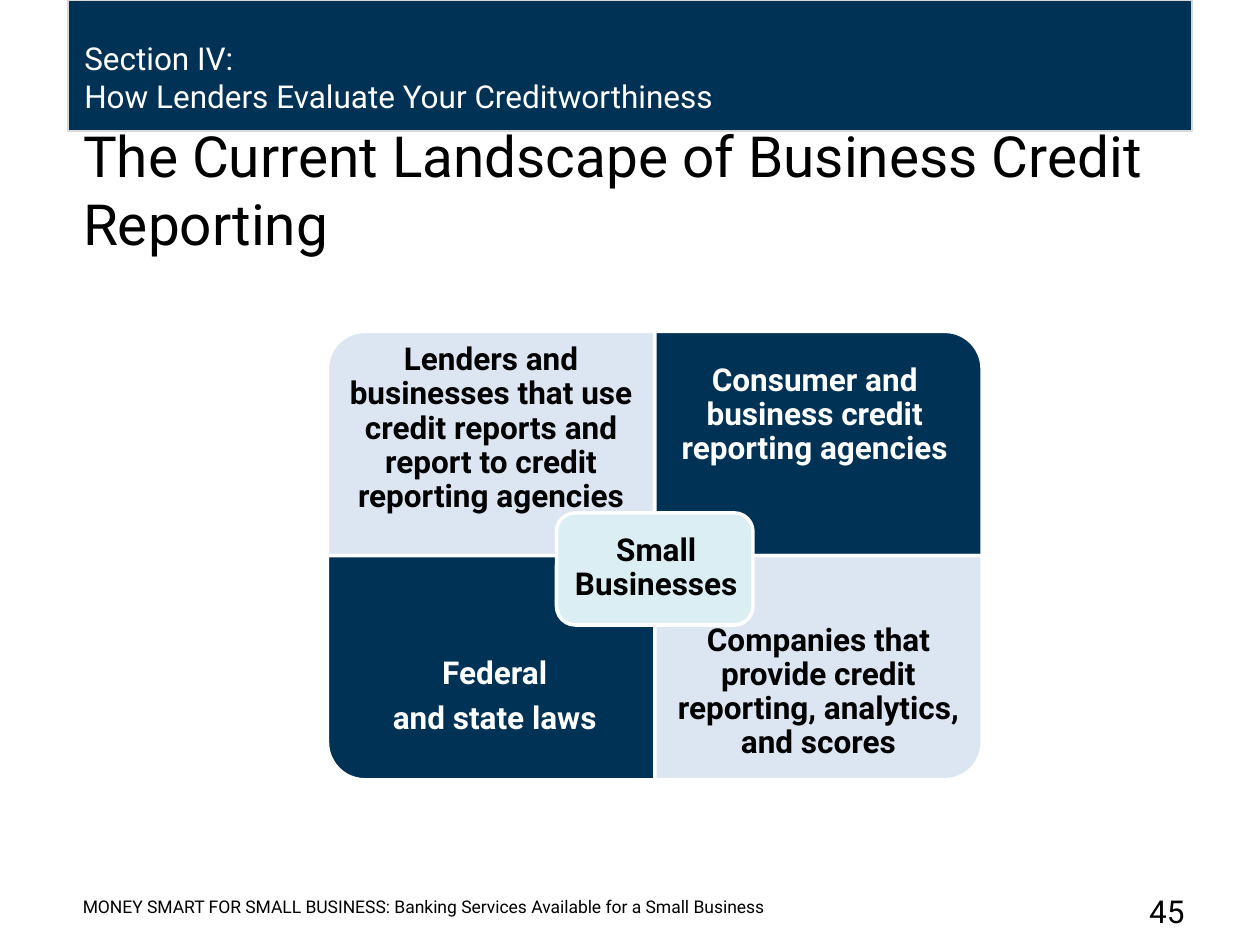
from pptx import Presentation
from pptx import util as u
from pptx.dml.color import RGBColor
from pptx.enum import shapes, text

NAVY = RGBColor(0x00, 0x32, 0x56)
PALE = RGBColor(0xDC, 0xE6, 0xF2)
AQUA = RGBColor(0xDB, 0xEE, 0xF4)
GREY = RGBColor(0xD8, 0xD8, 0xD8)
WHITE = RGBColor(0xFF, 0xFF, 0xFF)
BLACK = RGBColor(0x00, 0x00, 0x00)

FONT = "Roboto"
QUAD_W, QUAD_H = 6.6, 4.52
MID_X, MID_Y = 13.2, 11.2

# column, row, rotation, fill, font colour, text area, top inset, lines
QUADRANTS = [
    (0, 0, 270, PALE, BLACK, (6.6, 6.83, 6.6, 3.23), 0.76,
     ["Lenders and businesses that use credit reports and report to credit reporting agencies"]),
    (1, 0, 0, NAVY, WHITE, (13.2, 6.68, 6.45, 3.4), 0.36,
     ["Consumer and business credit reporting agencies"]),
    (0, 1, 180, NAVY, WHITE, (6.75, 12.34, 6.45, 3.4), 0.36,
     ["Federal", "and state laws"]),
    (1, 1, 90, PALE, BLACK, (13.2, 12.34, 6.6, 3.23), 0.36,
     ["Companies that provide credit reporting, analytics, and scores"]),
]


def cm(*lengths):
    return [u.Cm(length) for length in lengths]


def add_panel(parent, kind, box, fill, line, width, rotation=0):
    sp = parent.add_shape(kind, *cm(*box))
    sp.shadow.inherit = False
    sp.fill.solid()
    sp.fill.fore_color.rgb = fill
    sp.line.color.rgb = line
    sp.line.width = u.Pt(width)
    sp.rotation = rotation


def write(tf, lines, size, color, align=text.PP_ALIGN.LEFT, bold=False):
    tf.word_wrap = True
    for i, line in enumerate(lines):
        p = tf.paragraphs[0] if i == 0 else tf.add_paragraph()
        p.alignment = align
        r = p.add_run()
        r.text = line
        r.font.name = FONT
        r.font.size = u.Pt(size)
        r.font.bold = bold
        r.font.color.rgb = color


def add_text(parent, box, lines, size, color, anchor=text.MSO_ANCHOR.TOP, **style):
    tf = parent.add_textbox(*cm(*box)).text_frame
    tf.vertical_anchor = anchor
    write(tf, lines, size, color, **style)
    return tf


def add_label(parent, box, lines, color, inset, top):
    """Bold centred diagram text with tight line spacing."""
    tf = add_text(parent, box, lines, 18, color, text.MSO_ANCHOR.MIDDLE,
                  align=text.PP_ALIGN.CENTER, bold=True)
    tf.margin_left = tf.margin_right = tf.margin_bottom = u.Cm(inset)
    tf.margin_top = u.Cm(top)
    for p in tf.paragraphs:
        p.line_spacing = 0.9
        p.space_after = u.Pt(6.3)


def add_quadrant(parent, col, row, rotation, fill, color, area, top, lines):
    """One cell; the rotation turns its round corner outwards."""
    w, h = (QUAD_H, QUAD_W) if rotation % 180 else (QUAD_W, QUAD_H)
    x = MID_X + (col - 0.5) * QUAD_W - w / 2
    y = MID_Y + (row - 0.5) * QUAD_H - h / 2
    add_panel(parent, shapes.MSO_SHAPE.ROUND_1_RECTANGLE, (x, y, w, h),
              fill, WHITE, 2, rotation)
    add_label(parent, area, lines, color, 0.36, top)


def add_diagram(s):
    group = s.shapes.add_group_shape().shapes
    for quadrant in QUADRANTS:
        add_quadrant(group, *quadrant)
    add_panel(group, shapes.MSO_SHAPE.ROUNDED_RECTANGLE,
              (11.22, 10.34, 3.96, 2.26), AQUA, WHITE, 2)
    add_label(group, (11.35, 10.44, 3.76, 2.03), ["Small Businesses"], BLACK, 0.18, 0.18)


def add_title(s, title):
    sp = s.shapes.title
    sp.left, sp.top, sp.width, sp.height = cm(1.42, 2.57, 22.66, 2.74)
    tf = sp.text_frame
    tf.auto_size = text.MSO_AUTO_SIZE.NONE
    tf.vertical_anchor = text.MSO_ANCHOR.BOTTOM
    write(tf, [title], 32.4, BLACK)


def main():
    prs = Presentation()
    prs.slide_width, prs.slide_height = cm(25.4, 19.05)
    s = prs.slides.add_slide(prs.slide_layouts[5])
    add_panel(s.shapes, shapes.MSO_SHAPE.RECTANGLE, (1.37, 0, 22.66, 2.64), NAVY, GREY, 0.75)
    add_text(s.shapes, (1.45, 0.66, 17.68, 1.8),
             ["Section IV:", "How Lenders Evaluate Your Creditworthiness"], 18, WHITE)
    add_title(s, "The Current Landscape of Business Credit Reporting")
    add_diagram(s)
    add_text(s.shapes, (1.42, 17.88, 21.44, 0.81),
             ["MONEY SMART FOR SMALL BUSINESS: Banking Services Available for a Small Business"],
             10, BLACK, text.MSO_ANCHOR.MIDDLE)
    add_text(s.shapes, (21.69, 17.86, 2.44, 0.81), ["45"], 18, BLACK,
             align=text.PP_ALIGN.RIGHT)
    prs.save("out.pptx")


if __name__ == "__main__":
    main()
